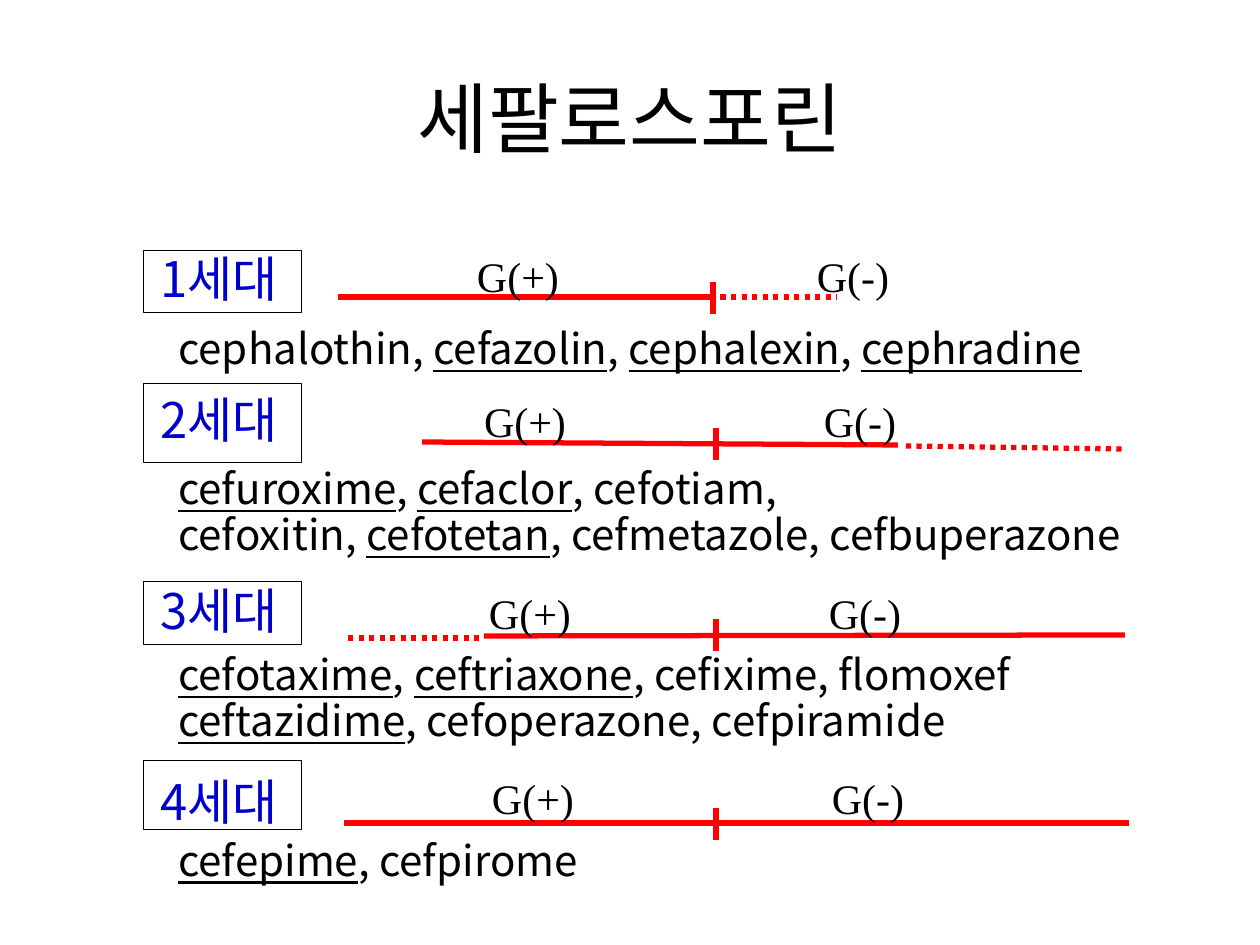
from lxml import etree
from pptx import Presentation
from pptx.dml.color import RGBColor
from pptx.enum.dml import MSO_LINE
from pptx.enum.shapes import MSO_CONNECTOR, MSO_SHAPE
from pptx.enum.text import MSO_ANCHOR, PP_ALIGN
from pptx.oxml.ns import qn
from pptx.util import Pt

EMU_PER_PX = 914400 / 126
CENTER = PP_ALIGN.CENTER
MIDDLE = MSO_ANCHOR.MIDDLE
DOTTED = MSO_LINE.ROUND_DOT
STRAIGHT = MSO_CONNECTOR.STRAIGHT
RECTANGLE = MSO_SHAPE.RECTANGLE

KOREAN_FONT = "Noto Sans CJK KR"
LABEL_FONT = "Times New Roman"
BLACK, BLUE, RED = "000000", "0000CC", "FF0000"

HEADING_SIZE, DRUG_SIZE = 28, 24
DRUG_INDENT = 18
LABEL_GAP = 335
TICK_HEIGHT = 32

# Heading, its line spacing, then drug lines with theirs; underscores enclose underlined names.
GENERATIONS = [
    ("1세대", 0.9, [("cephalothin, _cefazolin_, _cephalexin_, _cephradine_", 1.1)]),
    ("2세대", 1.1, [("_cefuroxime_, _cefaclor_, cefotiam,", 1.1),
                  ("cefoxitin, _cefotetan_, cefmetazole, cefbuperazone", 0.7)]),
    ("3세대", 1.2, [("_cefotaxime_, _ceftriaxone_, cefixime, flomoxef", 1.0),
                  ("_ceftazidime_, cefoperazone, cefpiramide", 0.7)]),
    ("4세대", 1.3, [("_cefepime_, cefpirome", 0.9)]),
]

# Solid line, dotted line, left and top of the G(+) label, top of the tick.
SPECTRA = [
    ((338, 297, 710, 297), (710, 297, 837, 297), (450, 244), (713, 282)),
    ((422, 442, 898, 445), (906, 446, 1125, 449), (457, 389), (716, 428)),
    ((484, 636, 1125, 635), (348, 638, 484, 638), (462, 581), (716, 619)),
    ((344, 823, 1129, 823), None, (465, 766), (716, 808)),
]

HEADING_BOXES = [(250, 63), (383, 79), (582, 63), (760, 69)]  # top, height


def px(length):
    return round(length * EMU_PER_PX)


def color(value):
    return RGBColor.from_string(value)


def style_paragraph(paragraph, size, font_name, font_color):
    font = paragraph.font
    font.size = Pt(size)
    font.color.rgb = color(font_color)
    font.name = font_name
    properties = paragraph._p.get_or_add_pPr().find(qn("a:defRPr"))
    etree.SubElement(properties, qn("a:ea")).set("typeface", font_name)


def add_text_box(shapes, left, top, width, height):
    text_frame = shapes.add_textbox(px(left), px(top), px(width), px(height)).text_frame
    text_frame.word_wrap = True
    return text_frame


def add_title(slide, text):
    text_frame = add_text_box(slide.shapes, 63, 38, 1134, 157)
    text_frame.vertical_anchor = MIDDLE
    paragraph = text_frame.paragraphs[0]
    paragraph.text = text
    paragraph.alignment = CENTER
    style_paragraph(paragraph, 44, KOREAN_FONT, BLACK)


def fill_paragraph(paragraph, text, size, font_color, spacing):
    for index, part in enumerate(text.split("_")):
        if part:
            run = paragraph.add_run()
            run.text = part
            if index % 2:
                run.font.underline = True
    paragraph.line_spacing = spacing
    paragraph.space_before = Pt(round(size * 0.22, 1))
    style_paragraph(paragraph, size, KOREAN_FONT, font_color)


def add_drug_list(slide):
    text_frame = add_text_box(slide.shapes, 148, 249, 1072, 672)
    paragraph = text_frame.paragraphs[0]
    for heading, heading_spacing, drug_lines in GENERATIONS:
        paragraph = paragraph or text_frame.add_paragraph()
        fill_paragraph(paragraph, heading, HEADING_SIZE, BLUE, heading_spacing)
        for drugs, spacing in drug_lines:
            paragraph = text_frame.add_paragraph()
            fill_paragraph(paragraph, drugs, DRUG_SIZE, BLACK, spacing)
            paragraph._p.get_or_add_pPr().set("marL", str(px(DRUG_INDENT)))
        paragraph = None
    text_frame.paragraphs[0].space_before = Pt(2.5)


def add_line(shapes, start_x, start_y, end_x, end_y, dash=None):
    line = shapes.add_connector(STRAIGHT, px(start_x), px(start_y), px(end_x), px(end_y))
    line.line.color.rgb = color(RED)
    line.line.width = Pt(3)
    if dash is not None:
        line.line.dash_style = dash
    etree.SubElement(line._element.spPr, qn("a:effectLst"))


def add_label(shapes, text, left, top):
    paragraph = add_text_box(shapes, left, top, 136, 63).paragraphs[0]
    paragraph.text = text
    paragraph.alignment = CENTER
    paragraph.space_before = Pt(3)
    style_paragraph(paragraph, 24, LABEL_FONT, BLACK)


def add_spectrum(slide, solid, dotted, label, tick):
    """Group the activity lines of one generation with their labels and tick."""
    shapes = slide.shapes.add_group_shape().shapes
    add_line(shapes, *solid)
    if dotted:
        add_line(shapes, *dotted, dash=DOTTED)
    left, top = label
    add_label(shapes, "G(+)", left, top)
    add_label(shapes, "G(-)", left + LABEL_GAP, top)
    tick_x, tick_top = tick
    add_line(shapes, tick_x, tick_top, tick_x, tick_top + TICK_HEIGHT)


def add_heading_box(slide, top, height):
    box = slide.shapes.add_shape(RECTANGLE, px(143), px(top), px(158), px(height))
    box.shadow.inherit = False
    box.fill.background()
    box.line.color.rgb = color(BLACK)
    box.line.width = Pt(0.5)


def main():
    presentation = Presentation()
    presentation.slide_width = px(1260)
    presentation.slide_height = px(945)
    slide = presentation.slides.add_slide(presentation.slide_layouts[6])
    add_title(slide, "세팔로스포린")
    add_drug_list(slide)
    for spectrum in SPECTRA:
        add_spectrum(slide, *spectrum)
    for top, height in HEADING_BOXES:
        add_heading_box(slide, top, height)
    presentation.save("out.pptx")


if __name__ == "__main__":
    main()
